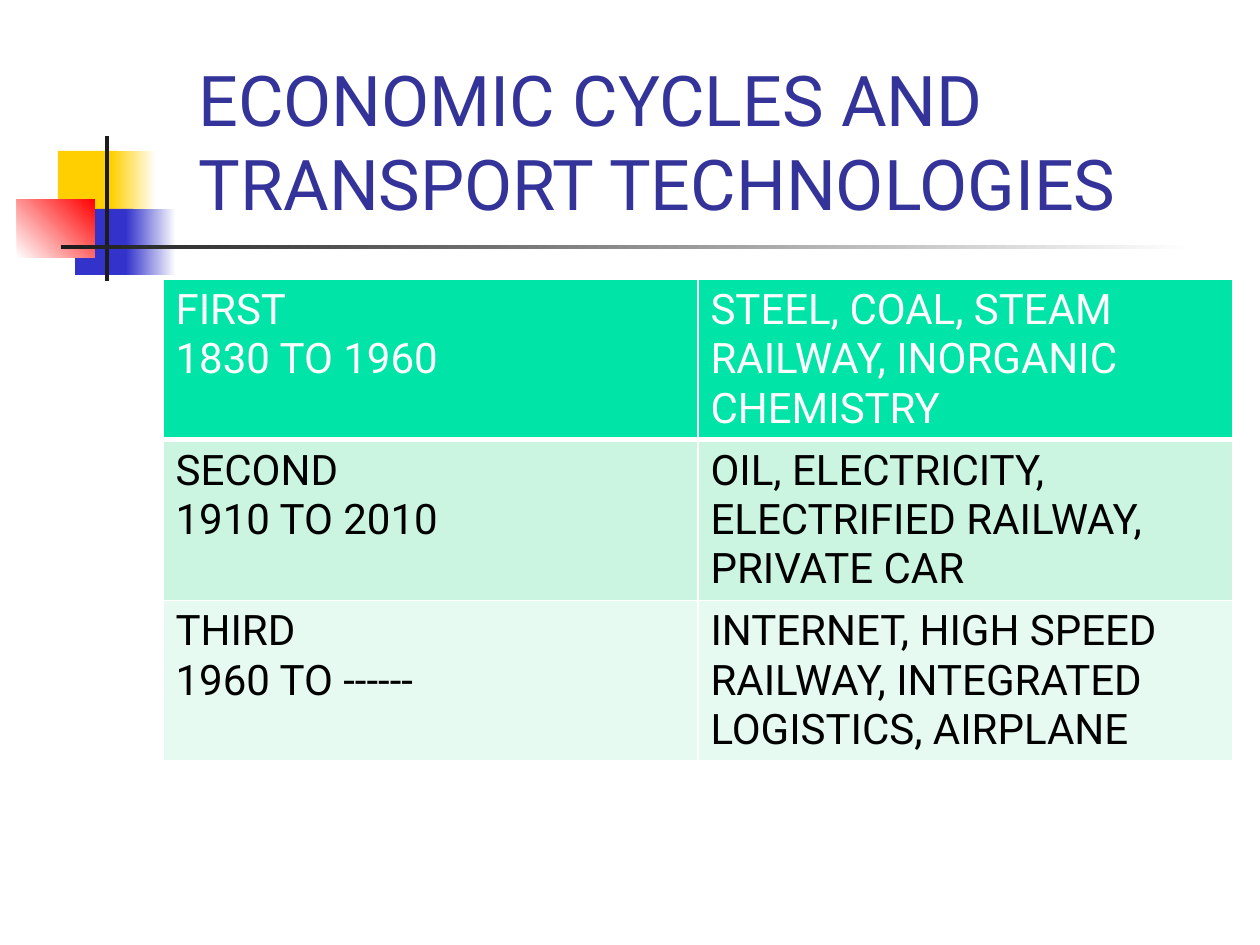
from dataclasses import dataclass

from lxml import etree
from pptx import Presentation
from pptx.dml.color import RGBColor
from pptx.enum.shapes import MSO_SHAPE
from pptx.enum.text import MSO_ANCHOR, MSO_AUTO_SIZE, PP_ALIGN
from pptx.oxml.ns import qn
from pptx.util import Emu, Pt

RECTANGLE = MSO_SHAPE.RECTANGLE
LEFT = PP_ALIGN.LEFT
BOTTOM = MSO_ANCHOR.BOTTOM
NO_AUTOFIT = MSO_AUTO_SIZE.NONE

PX_PER_INCH = 126
TITLE_ONLY = 5
FONT = "Roboto"
WHITE, BLACK, CHARCOAL = "FFFFFF", "000000", "1C1C1C"
YELLOW, BLUE, RED = "FFCF01", "3333CC", "FF0000"


@dataclass(frozen=True)
class Block:
    """A decorative rectangle; with an end colour it becomes a gradient."""
    left: int
    top: int
    width: int
    height: int
    color: str
    end_color: str | None = None
    angle: int = 0


@dataclass(frozen=True)
class Cycle:
    name: str
    years: str
    technologies: str
    fill: str
    text_color: str = BLACK


BLOCKS = [
    Block(58, 151, 60, 66, YELLOW),
    Block(111, 151, 45, 66, YELLOW, WHITE),
    Block(75, 209, 58, 66, BLUE),
    Block(126, 209, 50, 66, BLUE, WHITE),
    Block(17, 199, 78, 59, WHITE, RED, 45),
    Block(105, 136, 4, 145, CHARCOAL),
    Block(61, 245, 1134, 4, CHARCOAL, WHITE),
]

CYCLES = [
    Cycle("FIRST", "1830 TO 1960", "STEEL, COAL, STEAM RAILWAY, INORGANIC CHEMISTRY", "00E4A8", WHITE),
    Cycle("SECOND", "1910 TO 2010", "OIL, ELECTRICITY, ELECTRIFIED RAILWAY, PRIVATE CAR", "CCF5E1"),
    Cycle("THIRD", "1960 TO ------",
          "INTERNET, HIGH SPEED RAILWAY, INTEGRATED LOGISTICS, AIRPLANE", "E7FAF1"),
]


def px(length: int) -> Emu:
    return Emu(round(length * 914400 / PX_PER_INCH))


def rgb(color: str) -> RGBColor:
    return RGBColor.from_string(color)


def style_paragraph(paragraph, size: int, color: str) -> None:
    paragraph.alignment = LEFT
    paragraph.font.name = FONT
    paragraph.font.size = Pt(size)
    paragraph.font.color.rgb = rgb(color)


def add_block(slide, block: Block) -> None:
    shape = slide.shapes.add_shape(
        RECTANGLE, px(block.left), px(block.top), px(block.width), px(block.height))
    shape.shadow.inherit = False
    shape.line.fill.background()
    if block.end_color is None:
        shape.fill.solid()
        shape.fill.fore_color.rgb = rgb(block.color)
        return
    shape.fill.gradient()
    shape.fill.gradient_angle = block.angle
    for stop, color, position in zip(
            shape.fill.gradient_stops, (block.color, block.end_color), (0, 1)):
        stop.color.rgb = rgb(color)
        stop.position = position


def set_title(slide, text: str) -> None:
    title = slide.shapes.title
    title.left, title.top, title.width, title.height = px(186), px(73), px(1074), px(158)
    frame = title.text_frame
    frame.text = text
    frame.word_wrap = True
    frame.auto_size = NO_AUTOFIT
    frame.vertical_anchor = BOTTOM
    style_paragraph(frame.paragraphs[0], 40, "333399")


def set_borders(cell, top: int, bottom: int) -> None:
    """Draw white borders; the top and bottom widths are in points."""
    properties = cell._tc.get_or_add_tcPr()
    widths = {"a:lnL": 1, "a:lnR": 1, "a:lnT": top, "a:lnB": bottom}
    for index, (tag, width) in enumerate(widths.items()):
        line = etree.Element(qn(tag), w=str(Pt(width)))
        fill = etree.SubElement(line, qn("a:solidFill"))
        etree.SubElement(fill, qn("a:srgbClr"), val=WHITE)
        properties.insert(index, line)


def add_cycle_table(slide, cycles: list[Cycle]) -> None:
    row_height = 160
    table = slide.shapes.add_table(
        len(cycles), 2, px(163), px(279), px(1070), px(row_height * len(cycles))).table
    for row, cycle in enumerate(cycles):
        texts = (f"{cycle.name}\n{cycle.years}", cycle.technologies)
        for column, text in enumerate(texts):
            cell = table.cell(row, column)
            cell.text = text
            cell.fill.solid()
            cell.fill.fore_color.rgb = rgb(cycle.fill)
            set_borders(cell, top=3 if row == 1 else 1, bottom=3 if row == 0 else 1)
            for paragraph in cell.text_frame.paragraphs:
                style_paragraph(paragraph, 24, cycle.text_color)
                paragraph.font.bold = False


def main() -> None:
    presentation = Presentation()
    presentation.slide_width, presentation.slide_height = px(1260), px(945)
    slide = presentation.slides.add_slide(presentation.slide_layouts[TITLE_ONLY])
    for block in BLOCKS:
        add_block(slide, block)
    set_title(slide, "ECONOMIC CYCLES AND TRANSPORT TECHNOLOGIES")
    add_cycle_table(slide, CYCLES)
    presentation.save("out.pptx")


if __name__ == "__main__":
    main()
